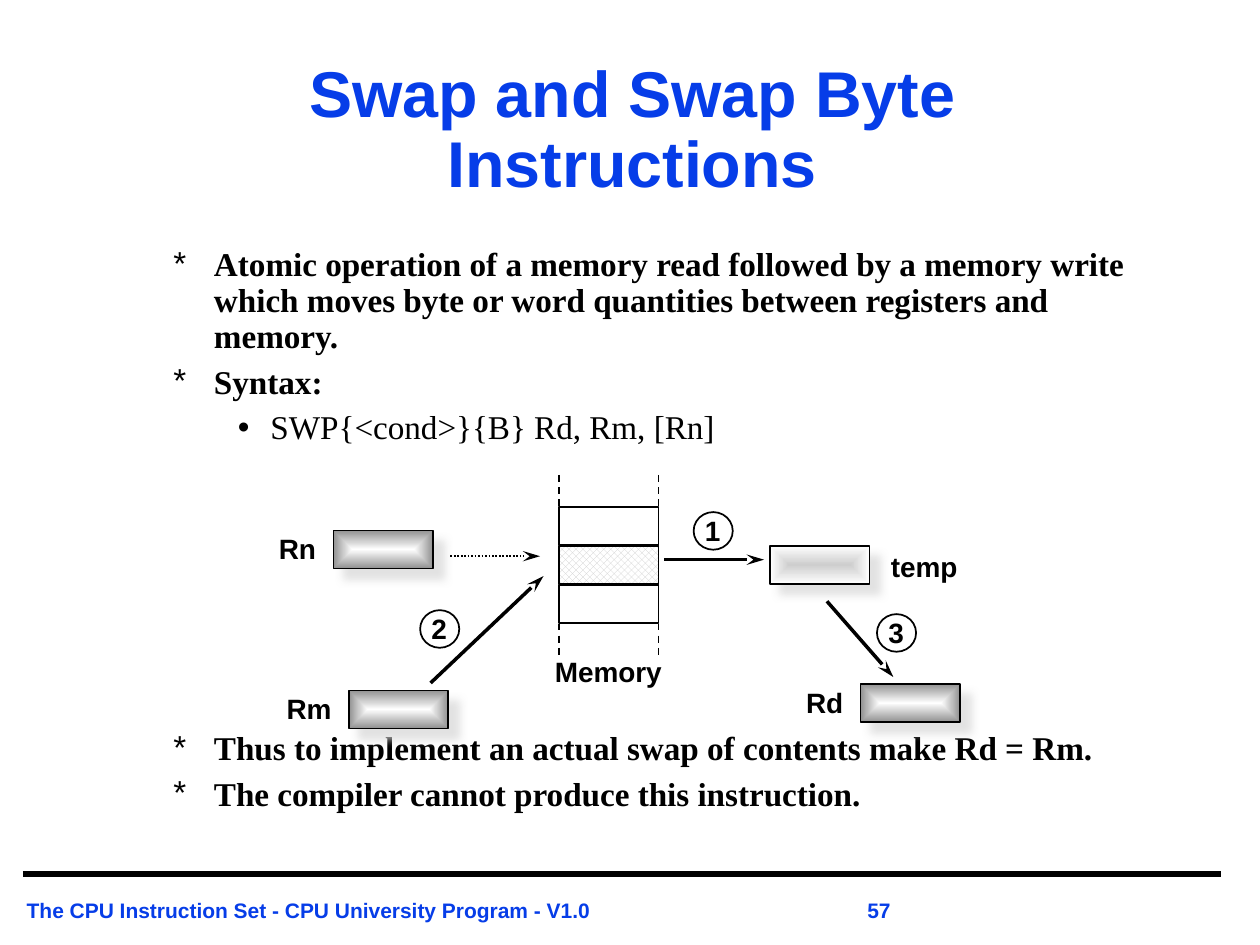
import pptx
import pptx.util
import pptx.dml.color
import pptx.enum.text
import pptx.enum.shapes
import pptx.enum.dml
import pptx.oxml
from lxml import etree

Cm = pptx.util.Cm
Pt = pptx.util.Pt
Rgb = pptx.dml.color.RGBColor.from_string
qn = pptx.oxml.ns.qn
kinds = pptx.enum.shapes.MSO_SHAPE
dashes = pptx.enum.dml.MSO_LINE
aligns = pptx.enum.text.PP_ALIGN

theme = {
    "ink": "000000", "blue": "063DE8", "white": "FFFFFF", "gray": "919191",
    "pale": "CECECE", "shade": "DADADA", "sans": "Arial", "serif": "Times New Roman",
    "title": 37, "body": 19, "label": 16, "foot": 12,
}

deck = pptx.Presentation()
deck.slide_width, deck.slide_height = Cm(25.43), Cm(19.08)
slide = deck.slides.add_slide(deck.slide_layouts[6])
items = slide.shapes


def write(x, y, w, h, lines, size, align="LEFT", color="ink", face="sans"):
    box = items.add_textbox(Cm(x), Cm(y), Cm(w), Cm(h))
    frame = box.text_frame
    frame.word_wrap = True
    for i, line in enumerate(lines):
        para = frame.paragraphs[0] if i == 0 else frame.add_paragraph()
        para.text = line
        para.alignment = getattr(aligns, align)
        para.line_spacing = 0.9
        para.font.name = theme[face]
        para.font.size = Pt(theme[size])
        para.font.bold = True
        para.font.color.rgb = Rgb(theme[color])
    return frame


def draw(x1, y1, x2, y2, width, dash=None, head=False):
    line = items.add_connector(pptx.enum.shapes.MSO_CONNECTOR.STRAIGHT,
                               Cm(x1), Cm(y1), Cm(x2), Cm(y2))
    line.line.color.rgb = Rgb(theme["ink"])
    line.line.width = Pt(width)
    if dash:
        line.line.dash_style = dash
    props = line._element.spPr
    if head:
        etree.SubElement(props.find(qn("a:ln")), qn("a:tailEnd"), type="stealth", w="med", len="lg")
    etree.SubElement(props, qn("a:effectLst"))


draw(0.46, 17.65, 24.64, 17.65, 3.75)
foot = write(0.36, 17.96, 25.02, 0.74,
             ["The CPU Instruction Set - CPU University Program - V1.0\t57"],
             "foot", color="blue")
foot.margin_left = foot.margin_right = Cm(0.18)
foot.margin_top = foot.margin_bottom = Cm(0.08)
para = foot.paragraphs[0]
para.line_spacing = 1.18
tabs = etree.Element(qn("a:tabLst"))
etree.SubElement(tabs, qn("a:tab"), pos=str(Cm(17.2)), algn="ctr")
para._p.get_or_add_pPr().insert_element_before(tabs, "a:defRPr", "a:extLst")

title = write(2.69, 1.02, 20.14, 3.28, ["Swap and Swap Byte Instructions"],
              "title", "CENTER", "blue")
title.vertical_anchor = pptx.enum.text.MSO_ANCHOR.MIDDLE

points = [
    ("Atomic operation of a memory read followed by a memory write which moves byte "
     "or word quantities between registers and memory.", 0, 0),
    ("Syntax:", 0, 5.7),
    ("SWP{<cond>}{B} Rd, Rm, [Rn]", 1, 5.7),
    ("Thus to implement an actual swap of contents make Rd = Rm.", 0, 163),
    ("The compiler cannot produce this instruction.", 0, 5.7),
]
body = write(3.25, 4.88, 20.75, 12.17, [text for text, _, _ in points], "body", face="serif")
for para, (_, level, gap) in zip(body.paragraphs, points):
    para.level = level
    para.space_before = Pt(gap)
    para.font.bold = level == 0
    props = para._p.get_or_add_pPr()
    props.set("marL", str(Cm((0.82, 1.96)[level])))
    props.set("indent", str(Cm((-0.82, -0.66)[level])))
    font = etree.Element(qn("a:buFont"), typeface=theme["sans"])
    mark = etree.Element(qn("a:buChar"), char="*•"[level])
    for part in (font, mark):
        props.insert_element_before(part, "a:tabLst", "a:defRPr", "a:extLst")

wide, high = 2.01, 0.77
left, top, step = 11.28, 10.24, 0.785
for row in range(3):
    cell = items.add_shape(kinds.RECTANGLE, Cm(left), Cm(top + row * step), Cm(wide), Cm(high))
    cell.shadow.inherit = False
    cell.line.color.rgb = Rgb(theme["ink"])
    cell.line.width = Pt(1)
    if row == 1:
        cell.fill.patterned()
        cell.fill.pattern = pptx.enum.dml.MSO_PATTERN.OUTLINED_DIAMOND
        cell.fill.fore_color.rgb = Rgb(theme["pale"])
        cell.fill.back_color.rgb = Rgb(theme["white"])
    else:
        cell.fill.background()
for x in (left, left + wide):
    for y in (9.59, 12.59):
        draw(x, y, x, y + 0.64, 1, dashes.DASH)
write(10.95, 13.16, 2.82, 0.86, ["Memory"], "label")

for name, x, y, inner, outer in [
    ("Rm", 7.04, 13.94, "white", "gray"), ("Rd", 17.37, 13.81, "white", "gray"),
    ("Rn", 6.73, 10.71, "white", "gray"), ("temp", 15.54, 11.02, "pale", "white"),
]:
    cell = items.add_shape(kinds.RECTANGLE, Cm(x), Cm(y), Cm(wide), Cm(high))
    cell.line.color.rgb = Rgb(theme["ink"])
    cell.line.width = Pt(1)
    cell.fill.gradient()
    for stop, color in zip(cell.fill.gradient_stops, (inner, outer)):
        stop.color.rgb = Rgb(theme[color])
    props = cell._element.spPr
    grad = props.find(qn("a:gradFill"))
    grad.remove(grad.find(qn("a:lin")))
    shape = etree.SubElement(grad, qn("a:path"), **{"path": "shape"})
    etree.SubElement(shape, qn("a:fillToRect"), l="50000", t="50000", r="50000", b="50000")
    cell.shadow.inherit = False
    cast = etree.SubElement(props.find(qn("a:effectLst")), qn("a:outerShdw"),
                            blurRad=str(Pt(5)), dist=str(Pt(8.5)), dir="2700000")
    tint = etree.SubElement(cast, qn("a:srgbClr"), val=theme["shade"])
    etree.SubElement(tint, qn("a:alpha"), val="75000")
    if name == "temp":
        write(x + 2.19, y + 0.03, 1.93, 0.86, [name], "label")
    else:
        write(x - 1.53, y - 0.02, 1.43, 0.86, [name], "label", "RIGHT")

draw(9.09, 11.23, 10.9, 11.23, 1, dashes.ROUND_DOT, True)
for digit, x, y, ends in [
    ("1", 14, 10.34, (13.41, 11.3, 15.42, 11.3)),
    ("2", 8.48, 12.32, (8.69, 13.79, 10.97, 11.63)),
    ("3", 17.7, 12.4, (16.69, 12.14, 18.03, 13.67)),
]:
    draw(*ends, 2, head=True)
    ring = items.add_shape(kinds.OVAL, Cm(x), Cm(y), Cm(0.79), Cm(0.76))
    ring.shadow.inherit = False
    ring.fill.background()
    ring.line.color.rgb = Rgb(theme["ink"])
    ring.line.width = Pt(1)
    write(x - 0.06, y - 0.02, 0.89, 0.86, [digit], "label", "CENTER")

deck.save("out.pptx")
